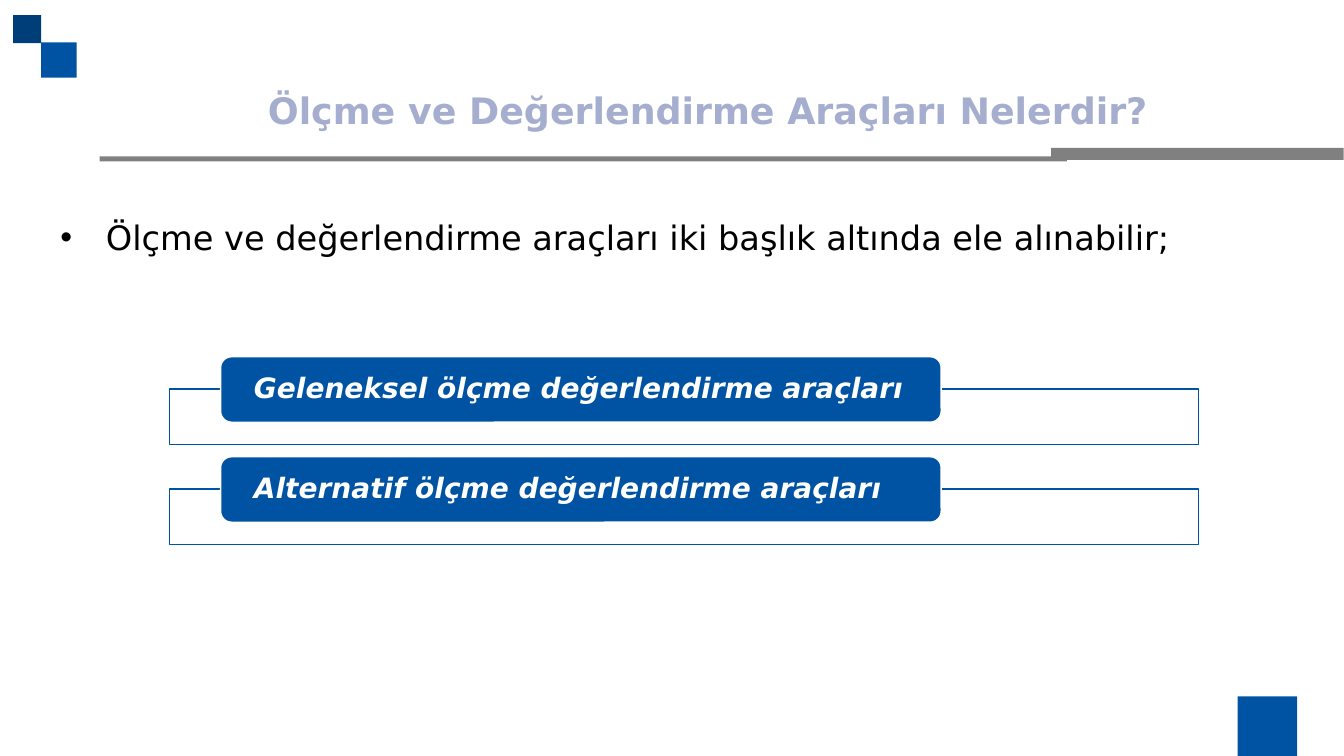
from lxml.etree import SubElement
from pptx import Presentation
from pptx.dml.color import RGBColor
from pptx.enum.shapes import MSO_SHAPE
from pptx.enum.text import MSO_ANCHOR, MSO_AUTO_SIZE, PP_ALIGN
from pptx.oxml.ns import qn
from pptx.util import Cm, Pt

BLUE = RGBColor(0x00, 0x53, 0xA3)
NAVY = RGBColor(0x00, 0x3E, 0x7A)
GRAY = RGBColor(0x80, 0x80, 0x80)
LILAC = RGBColor(0xA5, 0xAE, 0xCE)
WHITE = RGBColor(0xFF, 0xFF, 0xFF)
BLACK = RGBColor(0x00, 0x00, 0x00)

FONT = "DejaVu Sans"
DECOR = [
    (1.04, 1.07, 0.89, 0.89, BLUE),
    (0.33, 0.38, 0.71, 0.71, NAVY),
    (31.19, 17.55, 1.5, 1.5, BLUE),
    (26.49, 3.73, 7.37, 0.3, GRAY),
    (2.51, 3.94, 24.38, 0.13, GRAY),
]
TOOLS = [
    "Geleneksel ölçme değerlendirme araçları",
    "Alternatif ölçme değerlendirme araçları",
]
ROW_TOP = 8.99
ROW_STEP = 2.52


def write(shape, text, size, color, bold=False, italic=False, spacing=1.0,
          anchor=MSO_ANCHOR.TOP, side=0.25, top=0.13):
    frame = shape.text_frame
    frame.word_wrap = True
    frame.auto_size = MSO_AUTO_SIZE.NONE
    frame.vertical_anchor = anchor
    frame.margin_left = frame.margin_right = Cm(side)
    frame.margin_top = Cm(top)
    frame.margin_bottom = Cm(0)
    para = frame.paragraphs[0]
    para.alignment = PP_ALIGN.LEFT
    para.line_spacing = spacing
    para.space_before = Pt(0)
    run = para.add_run()
    run.text = text
    font = run.font
    font.name, font.size = FONT, Pt(size)
    font.bold, font.italic = bold, italic
    font.color.rgb = color
    return para


def place(shape, left, top, width, height):
    shape.left, shape.top = Cm(left), Cm(top)
    shape.width, shape.height = Cm(width), Cm(height)
    return shape


def block(slide, left, top, width, height, fill, line=None,
          kind=MSO_SHAPE.RECTANGLE):
    shape = slide.shapes.add_shape(
        kind, Cm(left), Cm(top), Cm(width), Cm(height))
    shape.shadow.inherit = False
    shape.fill.solid()
    shape.fill.fore_color.rgb = fill
    if line is None:
        shape.line.fill.background()
    else:
        shape.line.color.rgb = line
        shape.line.width = Pt(1)
    return shape


def fade(shape, percent):
    """Set the opacity of a solid fill."""
    color = shape.fill._xPr.find(qn("a:solidFill"))[0]
    SubElement(color, qn("a:alpha"), val=str(percent * 1000))


def bullet(para, left, hang):
    props = para._p.get_or_add_pPr()
    props.set("marL", str(Cm(left)))
    props.set("indent", str(-Cm(hang)))
    SubElement(props, qn("a:buFont"), typeface="Arial")
    SubElement(props, qn("a:buChar"), char="•")


def tool(slide, text, top):
    """Draw a framed row with its label on the upper edge."""
    frame = block(slide, 4.27, top + 0.81, 25.93, 1.4, WHITE, line=BLUE)
    fade(frame, 90)
    label = block(slide, 5.56, top, 18.16, 1.65, BLUE, line=WHITE,
                  kind=MSO_SHAPE.ROUNDED_RECTANGLE)
    write(label, text, 20, WHITE, bold=True, italic=True, spacing=0.9,
          anchor=MSO_ANCHOR.MIDDLE, side=0.76, top=0)


def main():
    deck = Presentation()
    deck.slide_width, deck.slide_height = Cm(33.87), Cm(19.05)
    slide = deck.slides.add_slide(deck.slide_layouts[1])

    title = place(slide.shapes.title, 6.27, 1.98, 24.46, 1.45)
    write(title, "Ölçme ve Değerlendirme Araçları Nelerdir?", 26, LILAC,
          bold=True, side=0.48, top=0.25)
    body = place(slide.placeholders[1], 0, 4.83, 33.07, 1.63)
    intro = write(
        body,
        "Ölçme ve değerlendirme araçları iki başlık altında ele alınabilir;",
        24, BLACK, spacing=1.5)
    bullet(intro, 2.42, 1.15)

    for left, top, width, height, fill in DECOR:
        block(slide, left, top, width, height, fill)
    for row, text in enumerate(TOOLS):
        tool(slide, text, ROW_TOP + row * ROW_STEP)
    deck.save("out.pptx")


if __name__ == "__main__":
    main()
